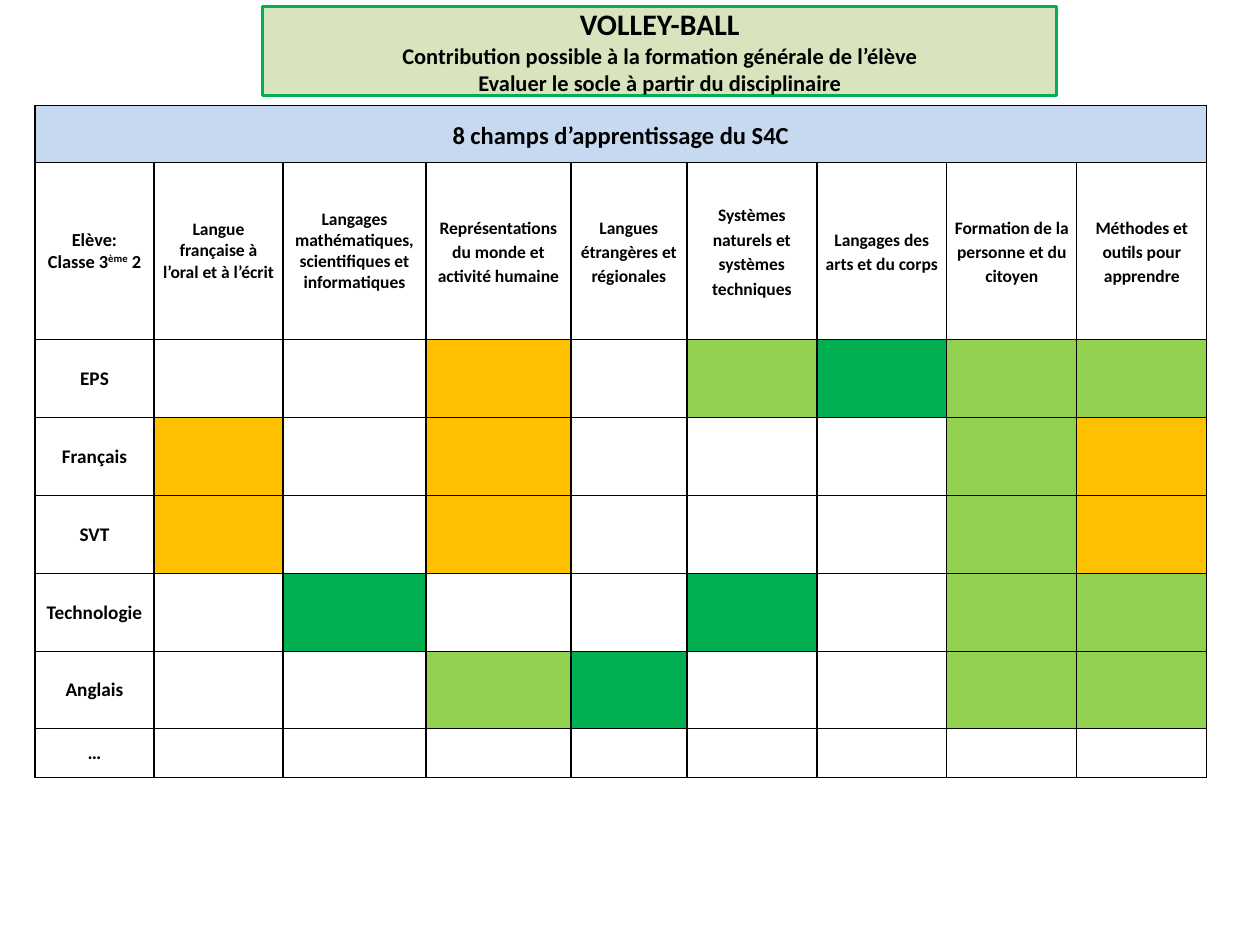
from dataclasses import dataclass
from lxml.etree import SubElement
from pptx import Presentation
from pptx.dml.color import RGBColor
from pptx.enum.text import MSO_ANCHOR, MSO_AUTO_SIZE, PP_ALIGN
from pptx.oxml.ns import qn
from pptx.util import Pt


@dataclass(frozen=True)
class Theme:
    font: str = "Calibri"
    ink: str = "000000"
    white: str = "FFFFFF"
    pale: str = "D7E4BD"
    blue: str = "C6D9F1"
    amber: str = "FFC000"
    lime: str = "92D050"
    green: str = "00B050"
    title: float = 17
    sub: float = 12.8
    band: float = 14
    pupil: float = 10.5
    field: float = 10
    topic: float = 11


THEME = Theme()
LEVELS = {"-": None, "w": THEME.white, "a": THEME.amber,
          "l": THEME.lime, "g": THEME.green}
TITLE = ["VOLLEY-BALL",
         "Contribution possible à la formation générale de l’élève",
         "Evaluer le socle à partir du disciplinaire"]
BAND = "8 champs d’apprentissage du S4C"
FIELDS = ["Langue française à l’oral et à l’écrit",
          "Langages mathématiques, scientifiques et informatiques",
          "Représentations du monde et activité humaine",
          "Langues étrangères et régionales",
          "Systèmes naturels et systèmes techniques",
          "Langages des arts et du corps",
          "Formation de la personne et du citoyen",
          "Méthodes et outils pour apprendre"]
# One letter per field: a = amber, l = lime, g = green, w = white, - = no fill
TOPICS = {"EPS": "--awlgll", "Français": "a-awwwla", "SVT": "a-awwwla",
          "Technologie": "-gwwgwll", "Anglais": "--lgwwll", "…": "--wwwwww"}
WIDTHS = [68, 73.7, 81.7, 82.9, 66.3] + [74.3] * 4
HEIGHTS = [32.4, 101.2] + [44.6] * 4 + [44, 28]


def apply(item, values):
    for name, value in values.items():
        setattr(item, name, value)


def paint(fill, color):
    if color:
        fill.solid()
        fill.fore_color.rgb = RGBColor.from_string(color)
    else:
        fill.background()


def style(para, size, space=1.0):
    apply(para, {"alignment": PP_ALIGN.CENTER, "line_spacing": space})
    for run in para.runs:
        apply(run.font, {"name": THEME.font, "size": Pt(size), "bold": True})
        run.font.color.rgb = RGBColor.from_string(THEME.ink)


def border(cell):
    props = cell._tc.get_or_add_tcPr()
    for spot, side in enumerate(("lnL", "lnR", "lnT", "lnB")):
        line = SubElement(props, qn(f"a:{side}"), w=str(Pt(1)))
        fill = SubElement(line, qn("a:solidFill"))
        SubElement(fill, qn("a:srgbClr"), val=THEME.ink)
        props.insert(spot, line)


def write(cell, text, size, space=1.0):
    cell.text = text
    style(cell.text_frame.paragraphs[0], size, space)


def head(slide, left, top, width, height):
    title = slide.shapes.title
    apply(title, {"left": Pt(left), "top": Pt(top),
                  "width": Pt(width), "height": Pt(height)})
    paint(title.fill, THEME.pale)
    paint(title.line.fill, THEME.green)
    title.line.width = Pt(1.75)
    frame = title.text_frame
    frame.text = "\n".join(TITLE)
    apply(frame, {"auto_size": MSO_AUTO_SIZE.NONE, "word_wrap": True,
                  "vertical_anchor": MSO_ANCHOR.MIDDLE,
                  "margin_top": 0, "margin_bottom": 0})
    for para, size in zip(frame.paragraphs, (THEME.title, THEME.sub, THEME.sub)):
        style(para, size)


def pupil(cell):
    para = cell.text_frame.paragraphs[0]
    para.add_run().text = "Elève:"
    para.add_line_break()
    for text in ("Classe 3", "ème", " 2"):
        para.add_run().text = text
    style(para, THEME.pupil)
    para.runs[2].font._element.set("baseline", "30000")


def grid(slide, left, top, width, height):
    shape = slide.shapes.add_table(len(HEIGHTS), len(WIDTHS), Pt(left),
                                   Pt(top), Pt(width), Pt(height))
    table = shape.table
    apply(table, {"first_row": False, "horz_banding": False})
    for col, size in zip(table.columns, WIDTHS):
        col.width = Pt(size * width / sum(WIDTHS))
    for row, size in zip(table.rows, HEIGHTS):
        row.height = Pt(size * height / sum(HEIGHTS))
    for cell in table.iter_cells():
        apply(cell, {"vertical_anchor": MSO_ANCHOR.MIDDLE,
                     "margin_left": Pt(4.3), "margin_right": Pt(4.3),
                     "margin_top": 0, "margin_bottom": 0})
        paint(cell.fill, None)
        border(cell)

    band = table.cell(0, 0)
    band.merge(table.cell(0, len(WIDTHS) - 1))
    write(band, BAND, THEME.band, 1.15)
    paint(band.fill, THEME.blue)

    pupil(table.cell(1, 0))
    for col, text in enumerate(FIELDS, 1):
        cell = table.cell(1, col)
        write(cell, text, THEME.field, 1.15 if col > 2 else 1.0)
        paint(cell.fill, THEME.white if col > 2 else None)

    for row, (topic, marks) in enumerate(TOPICS.items(), 2):
        write(table.cell(row, 0), topic, THEME.topic)
        for col, mark in enumerate(marks, 1):
            paint(table.cell(row, col).fill, LEVELS[mark])


def main():
    deck = Presentation()
    apply(deck, {"slide_width": Pt(720), "slide_height": Pt(540)})
    slide = deck.slides.add_slide(deck.slide_layouts[5])
    head(slide, 150, 3.6, 454, 51)
    grid(slide, 20, 60.4, 669.6, 384)
    deck.save("out.pptx")


if __name__ == "__main__":
    main()
